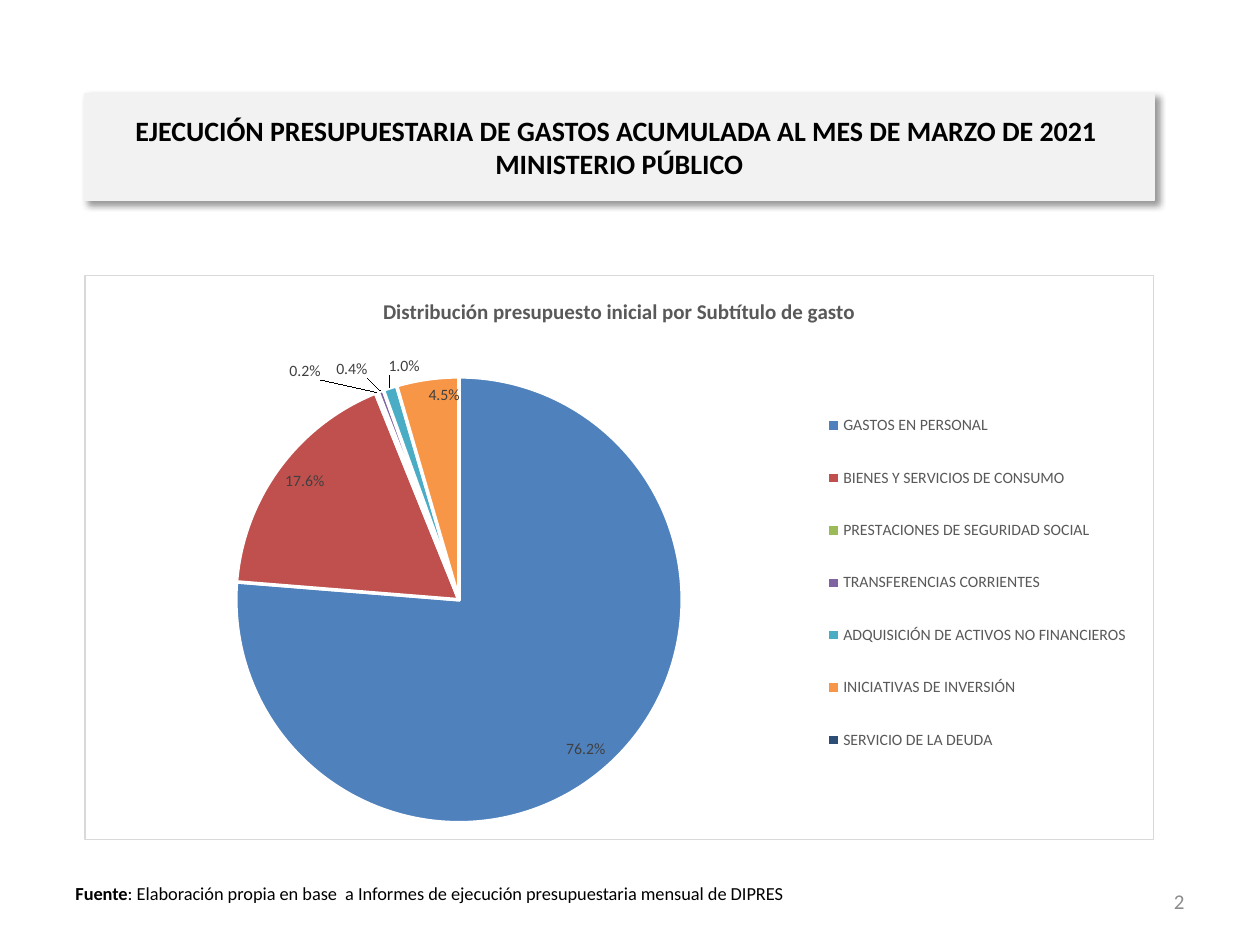
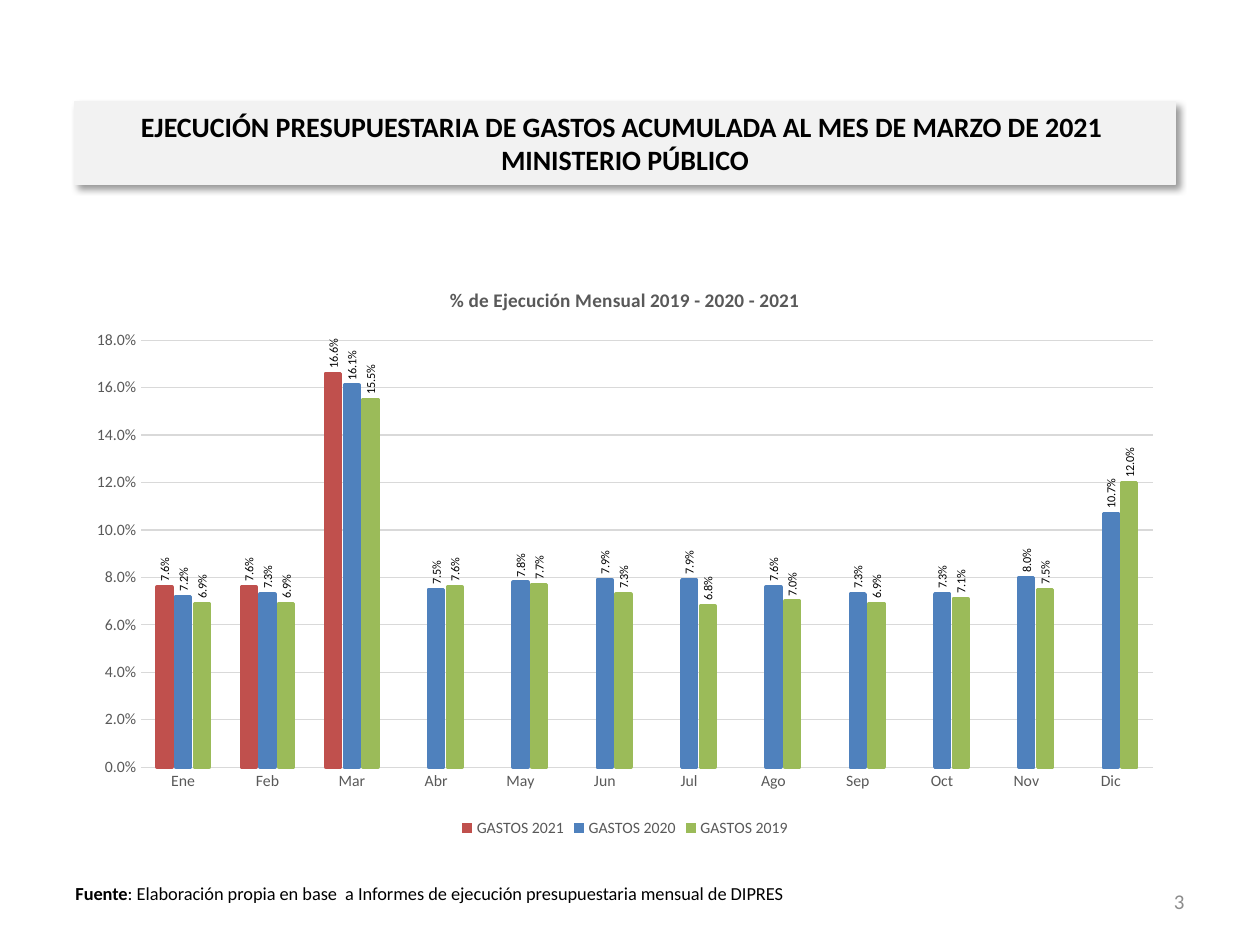
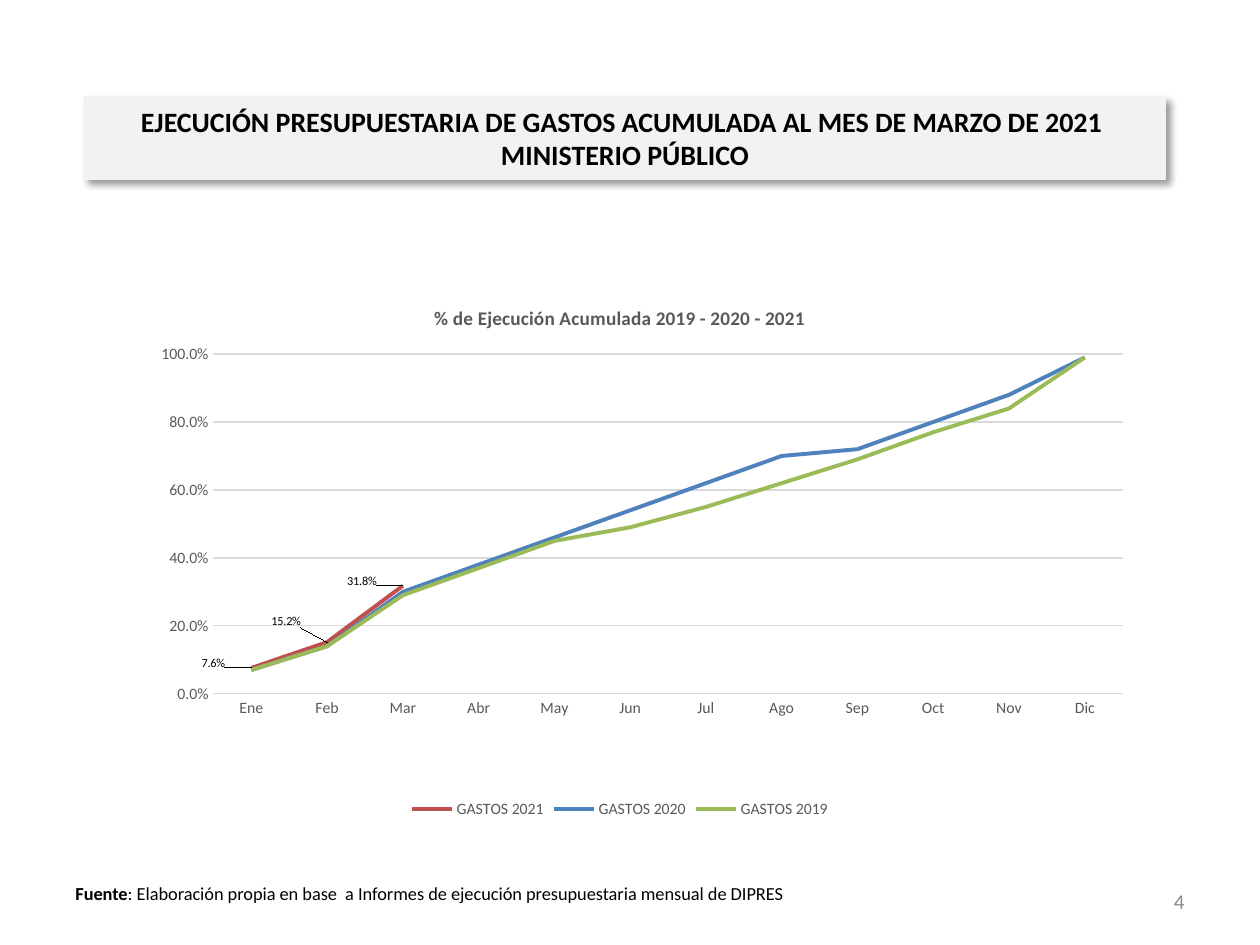
"""Build the three budget execution slides of the public prosecutor's office."""
import dataclasses

import pptx
import pptx.chart.data
import pptx.dml.color
import pptx.enum.chart
import pptx.enum.text
import pptx.oxml
import pptx.oxml.ns
import pptx.util

Inches = pptx.util.Inches
Pt = pptx.util.Pt
XL = pptx.enum.chart
LABEL = XL.XL_LABEL_POSITION
qn = pptx.oxml.ns.qn


@dataclasses.dataclass(frozen=True)
class Theme:
    font: str = "Calibri"
    text: str = "000000"
    chart_text: str = "595959"
    label_text: str = "404040"
    number: str = "8C8C8C"
    band: str = "F2F2F2"
    rule: str = "D9D9D9"
    white: str = "FFFFFF"
    years: tuple = ("C0504D", "4F81BD", "9BBB59")
    slices: tuple = ("4F81BD", "C0504D", "9BBB59", "8064A2", "4BACC6", "F79646", "2C4D75")
    title_size: float = 16
    source_size: float = 10.5
    number_size: float = 12
    chart_size: float = 10
    small_size: float = 9
    label_size: float = 7


TITLE = "EJECUCIÓN PRESUPUESTARIA DE GASTOS ACUMULADA AL MES DE MARZO DE 2021 \vMINISTERIO PÚBLICO"
SOURCE = ("Fuente", ": Elaboración propia en base  a Informes de ejecución presupuestaria mensual de DIPRES")
PERCENT = "0.0%"
MONTHS = ["Ene", "Feb", "Mar", "Abr", "May", "Jun", "Jul", "Ago", "Sep", "Oct", "Nov", "Dic"]
YEARS = ("GASTOS 2021", "GASTOS 2020", "GASTOS 2019")
SUBTITLES = {
    "GASTOS EN PERSONAL": 0.762,
    "BIENES Y SERVICIOS DE CONSUMO": 0.176,
    "PRESTACIONES DE SEGURIDAD SOCIAL": 0.002,
    "TRANSFERENCIAS CORRIENTES": 0.004,
    "ADQUISICIÓN DE ACTIVOS NO FINANCIEROS": 0.01,
    "INICIATIVAS DE INVERSIÓN": 0.045,
    "SERVICIO DE LA DEUDA": 0,
}
MONTHLY = (
    [0.076, 0.076, 0.166] + [None] * 9,
    [0.072, 0.073, 0.161, 0.075, 0.078, 0.079, 0.079, 0.076, 0.073, 0.073, 0.08, 0.107],
    [0.069, 0.069, 0.155, 0.076, 0.077, 0.073, 0.068, 0.07, 0.069, 0.071, 0.075, 0.12],
)
ACCUMULATED = (
    [0.076, 0.152, 0.318] + [None] * 9,
    [0.07, 0.14, 0.3, 0.38, 0.46, 0.54, 0.62, 0.7, 0.72, 0.8, 0.88, 0.99],
    [0.07, 0.14, 0.29, 0.37, 0.45, 0.49, 0.55, 0.62, 0.69, 0.77, 0.84, 0.99],
)


def rgb(color):
    return pptx.dml.color.RGBColor.from_string(color)


def box(at):
    return [Inches(v) for v in at]


def xml(tag, body=""):
    return pptx.oxml.parse_xml(f"<{tag} {pptx.oxml.ns.nsdecls('a', 'c')}>{body}</{tag}>")


def layout(**values):
    body = "".join(f'<c:{name} val="{value}"/>' for name, value in values.items())
    return xml("c:layout", f"<c:manualLayout>{body}</c:manualLayout>")


def area(x, y, w, h, **target):
    return layout(**target, xMode="edge", yMode="edge", x=x, y=y, w=w, h=h)


class Deck:
    def __init__(self, theme):
        self.theme = theme
        self.prs = pptx.Presentation()
        self.prs.slide_width, self.prs.slide_height = Inches(10), Inches(7.5)
        self.s = None

    def style(self, font, size, color=None, bold=None):
        font.name, font.size, font.bold = self.theme.font, Pt(size), bold
        font.color.rgb = rgb(color or self.theme.text)

    def slide(self, number, *title_at):
        self.s = self.prs.slides.add_slide(self.prs.slide_layouts[5])
        self.title(title_at)
        self.source()
        self.number(number)

    def title(self, at):
        t, sp = self.theme, self.s.shapes.title
        sp.left, sp.top, sp.width, sp.height = box(at)
        sp.fill.solid()
        sp.fill.fore_color.rgb = rgb(t.band)
        sp.line.color.rgb = rgb(t.band)
        sp.line.width = Pt(0.75)
        sp.element.spPr.append(xml(
            "a:effectLst",
            f'<a:outerShdw blurRad="{Pt(4)}" dist="{Pt(3)}" dir="2700000" algn="tl" rotWithShape="0">'
            f'<a:srgbClr val="{t.text}"><a:alpha val="40000"/></a:srgbClr></a:outerShdw>'))
        tf = sp.text_frame
        tf.text = TITLE
        tf.word_wrap = True
        tf.auto_size = pptx.enum.text.MSO_AUTO_SIZE.NONE
        tf.vertical_anchor = pptx.enum.text.MSO_ANCHOR.MIDDLE
        p = tf.paragraphs[0]
        p.alignment = pptx.enum.text.PP_ALIGN.CENTER
        self.style(p.font, t.title_size, bold=True)

    def textbox(self, *at):
        tf = self.s.shapes.add_textbox(*box(at)).text_frame
        tf.word_wrap = True
        return tf

    def source(self):
        p = self.textbox(0.5, 6.95, 5.91, 0.28).paragraphs[0]
        self.style(p.font, self.theme.source_size)
        for i, text in enumerate(SOURCE):
            r = p.add_run()
            r.text = text
            r.font.bold = i == 0

    def number(self, number):
        tf = self.textbox(7.17, 6.95, 2.33, 0.4)
        tf.vertical_anchor = pptx.enum.text.MSO_ANCHOR.MIDDLE
        p = tf.paragraphs[0]
        p.text = str(number)
        p.alignment = pptx.enum.text.PP_ALIGN.RIGHT
        self.style(p.font, self.theme.number_size, self.theme.number)

    def chart(self, kind, at, title, title_size, categories, series, border, plot, legend):
        t = self.theme
        data = pptx.chart.data.CategoryChartData(number_format=PERCENT)
        data.categories = categories
        for name, values in series:
            data.add_series(name, values)
        chart = self.s.shapes.add_chart(kind, *box(at), data).chart
        self.style(chart.font, t.chart_size)
        chart.has_title = True
        chart.chart_title.include_in_layout = False
        p = chart.chart_title.text_frame.paragraphs[0]
        p.text = title
        self.style(p.font, title_size, t.chart_text, True)
        chart.has_legend = True
        chart.legend.position = legend
        chart.legend.include_in_layout = False
        self.style(chart.legend.font, t.small_size, t.chart_text)
        node = chart.element.find(qn("c:chart"))
        if chart.element.find(qn("c:roundedCorners")) is None:
            corners = xml("c:roundedCorners")
            corners.set("val", "0")
            node.addprevious(corners)
        fill = '<a:solidFill><a:srgbClr val="{}"/></a:solidFill>'
        node.addnext(xml("c:spPr", fill.format(t.white)
                         + f'<a:ln w="{Pt(0.75)}">{fill.format(border)}</a:ln>'))
        plot_area = node.find(qn("c:plotArea"))
        for old in plot_area.findall(qn("c:layout")):
            plot_area.remove(old)
        plot_area.insert(0, area(*plot, layoutTarget="inner"))
        return chart

    def year_chart(self, kind, at, title, values, plot, top, step, line_width):
        t = self.theme
        chart = self.chart(kind, at, title, 11, MONTHS, zip(YEARS, values), t.white, plot,
                           XL.XL_LEGEND_POSITION.BOTTOM)
        axis = chart.value_axis
        axis.minimum_scale, axis.maximum_scale, axis.major_unit = 0, top, step
        axis.tick_labels.number_format = PERCENT
        axis.tick_labels.number_format_is_linked = False
        axis.format.line.fill.background()
        for ax in (axis, chart.category_axis):
            ax.major_tick_mark = ax.minor_tick_mark = XL.XL_TICK_MARK.NONE
            self.style(ax.tick_labels.font, t.small_size, t.chart_text)
        for line in (axis.major_gridlines.format.line, chart.category_axis.format.line):
            line.color.rgb = rgb(t.rule)
            line.width = Pt(0.75)
        chart.plots[0].vary_by_categories = False
        for series, color in zip(chart.plots[0].series, t.years):
            series.format.line.color.rgb = rgb(color)
            series.format.line.width = Pt(line_width)
        return chart

    def labels(self, series, size, color=None):
        labels = series.data_labels
        labels.show_value = True
        labels.number_format = PERCENT
        labels.number_format_is_linked = False
        self.style(labels.font, size, color)
        return labels

    def place_label(self, series, index, position, shift, size, color=None):
        label = series.points[index].data_label
        self.style(label.font, size, color)
        label.position = position
        if shift:
            node = series.data_labels._element.xpath(f"c:dLbl[c:idx/@val='{index}']/c:idx")[0]
            node.addnext(layout(x=shift[0], y=shift[1]))

    def pie(self):
        t = self.theme
        chart = self.chart(XL.XL_CHART_TYPE.PIE, (0.67, 2.18, 8.49, 4.49),
                           "Distribución presupuesto inicial por Subtítulo de gasto", 12,
                           list(SUBTITLES), [("Series 1", list(SUBTITLES.values()))], t.rule,
                           (0.14, 0.18, 0.42, 0.79), XL.XL_LEGEND_POSITION.RIGHT)
        chart.legend._element.find(qn("c:legendPos")).addnext(area(0.68, 0.19, 0.31, 0.71))
        chart.plots[0].vary_by_categories = True
        series = chart.plots[0].series[0]
        self.labels(series, t.small_size, t.label_text)
        shifts = {2: (-0.05, -0.01), 3: (-0.01, -0.01), 4: (0.03, -0.01), 6: None}
        for i, color in enumerate(t.slices):
            fmt = series.points[i].format
            fmt.fill.solid()
            fmt.fill.fore_color.rgb = rgb(color)
            fmt.line.color.rgb = rgb(t.white)
            fmt.line.width = Pt(2)
            position = LABEL.OUTSIDE_END if i in shifts else LABEL.INSIDE_END
            self.place_label(series, i, position, shifts.get(i), t.small_size, t.label_text)

    def columns(self):
        t = self.theme
        chart = self.year_chart(XL.XL_CHART_TYPE.COLUMN_CLUSTERED, (0.59, 2.1, 8.74, 4.59),
                                "% de Ejecución Mensual 2019 - 2020 - 2021", MONTHLY,
                                (0.06, 0.13, 0.92, 0.74), 0.18, 0.02, 2)
        plot = chart.plots[0]
        plot.gap_width, plot.overlap = 219, -27
        for series, color in zip(plot.series, t.years):
            series.format.fill.solid()
            series.format.fill.fore_color.rgb = rgb(color)
            labels = self.labels(series, t.label_size)
            labels.position = LABEL.OUTSIDE_END
            body = labels._element.find(qn("c:txPr")).find(qn("a:bodyPr"))
            body.set("rot", "-5400000")
            body.set("vert", "horz")

    def lines(self):
        t = self.theme
        chart = self.year_chart(XL.XL_CHART_TYPE.LINE, (0.67, 2.25, 8.5, 4.29),
                                "% de Ejecución Acumulada 2019 - 2020 - 2021", ACCUMULATED,
                                (0.12, 0.13, 0.85, 0.63), 1, 0.2, 2.25)
        for series in chart.plots[0].series:
            series.smooth = False
            series.marker.style = XL.XL_MARKER_STYLE.NONE
        current = chart.plots[0].series[0]
        self.labels(current, t.label_size)
        for i, dy in enumerate((-0.01, -0.04, -0.01)):
            self.place_label(current, i, LABEL.LEFT, (-0.02, dy), t.label_size)


def main():
    deck = Deck(Theme())
    deck.slide(2, 0.67, 0.74, 8.49, 0.85)
    deck.pie()
    deck.slide(3, 0.59, 0.81, 8.74, 0.65)
    deck.columns()
    deck.slide(4, 0.67, 0.77, 8.58, 0.65)
    deck.lines()
    deck.prs.save("out.pptx")


if __name__ == "__main__":
    main()
